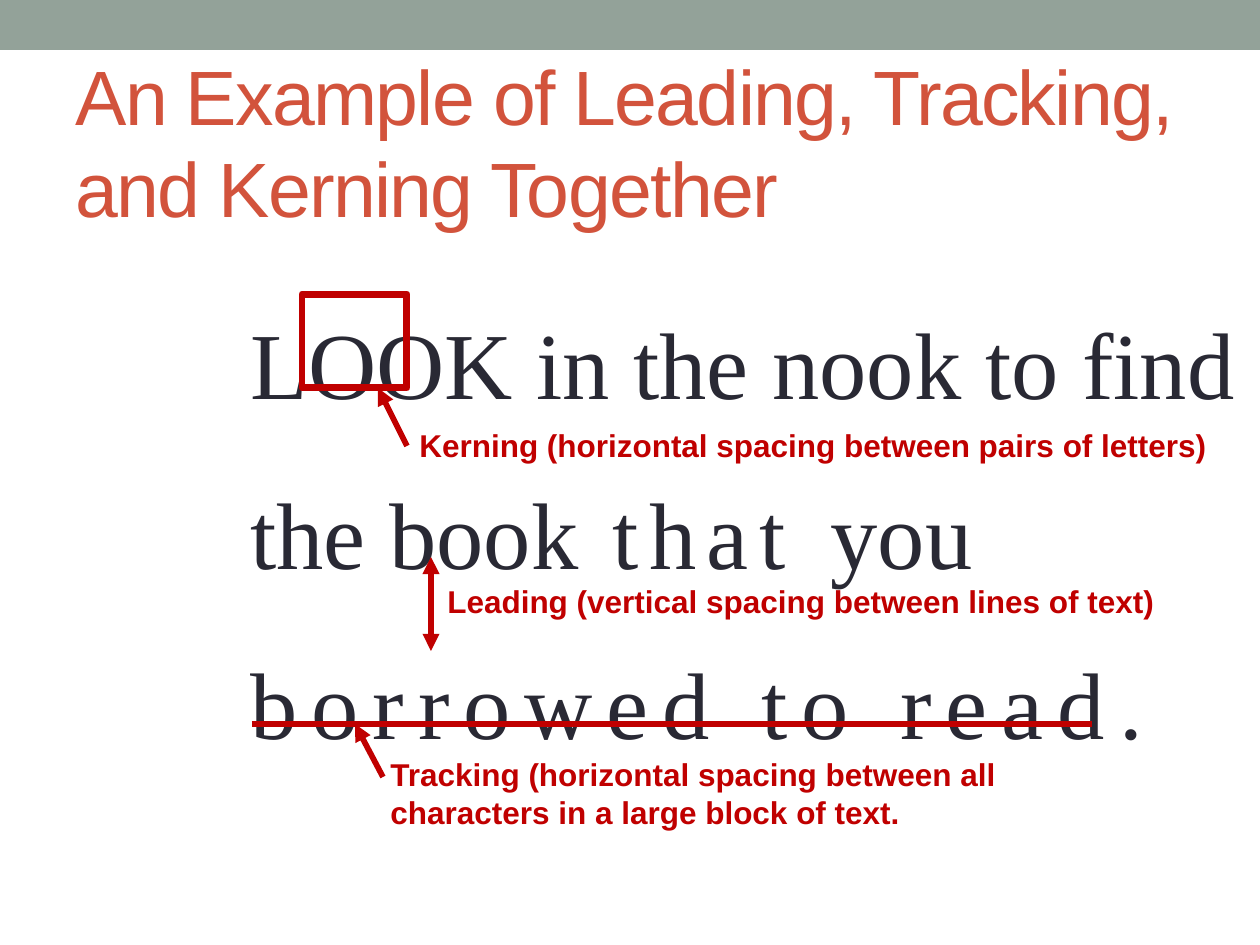
from lxml.etree import SubElement
from pptx import Presentation
from pptx.dml.color import RGBColor
from pptx.enum.shapes import MSO_CONNECTOR as Connector, MSO_SHAPE as Preset
from pptx.enum.text import MSO_ANCHOR as Anchor, PP_ALIGN as Align
from pptx.oxml.ns import qn
from pptx.util import Pt

EMU_PER_PX = 914400 // 126
SLIDE_SIZE = (1260, 945)

THEME = {
    "band": "93A299",
    "paper": "FFFFFF",
    "mark": "C00000",
    "box_line": 4,
    "arrow_line": 3.25,
    "title": {"name": "Arial", "size": 44, "color": "D2533C"},
    "sample": {"name": "Times New Roman", "size": 54, "color": "292934"},
    "label": {"name": "Arial", "size": 18, "color": "C00000", "bold": True},
}

# Boxes are left, top, width, height in px; runs are text, letter spacing in points
BAND_BOX = (0, 0, 1260, 50)
TITLE_BOX = (63, 73, 1134, 136)
TITLE_RUNS = [("An Example of Leading, Tracking, and Kerning Together", -1)]

SAMPLE_BOX = (238, 242, 1018, 630)
SAMPLE_RUNS = [
    ("L", 0),
    ("O", -22),
    ("OK in the nook to find the book", 0),
    (" that ", 6),
    ("you ", 0),
    ("borrowed to read", 8),
    (".", 0),
]
KERNED_PAIR_BOX = (302, 294, 105, 94)

LABELS = [
    ("Kerning (horizontal spacing between pairs of letters)", (407, 420, 840, 50)),
    ("Leading (vertical spacing between lines of text)", (435, 576, 760, 50)),
    ("Tracking (horizontal spacing between all characters in a large block of text.",
     (378, 749, 693, 89)),
]

# start, end, ends that carry an arrowhead
LINES = [
    ((407, 446), (378, 388), ["tailEnd"]),
    ((431, 557), (431, 651), ["headEnd", "tailEnd"]),
    ((383, 777), (355, 724), ["tailEnd"]),
    ((252, 724), (1092, 724), []),
]


def px(values):
    return [value * EMU_PER_PX for value in values]


def color(name):
    return RGBColor.from_string(name)


def add_rectangle(slide, box, fill=None, line=None, width=0):
    shape = slide.shapes.add_shape(Preset.RECTANGLE, *px(box))
    shape.shadow.inherit = False
    if fill:
        shape.fill.solid()
        shape.fill.fore_color.rgb = color(fill)
    else:
        shape.fill.background()
    if line:
        shape.line.color.rgb = color(line)
        shape.line.width = Pt(width)
    else:
        shape.line.fill.background()
    return shape


def write(shape, runs, style, anchor=Anchor.TOP, line_spacing=None):
    """Fill the shape with one left-aligned paragraph of letter-spaced runs."""
    frame = shape.text_frame
    frame.word_wrap = True
    frame.vertical_anchor = anchor
    paragraph = frame.paragraphs[0]
    paragraph.alignment = Align.LEFT
    paragraph.line_spacing = line_spacing
    font_values = {"name": style["name"], "size": Pt(style["size"]),
                   "bold": style.get("bold", False)}
    for text, spacing in runs:
        run = paragraph.add_run()
        run.text = text
        for attribute, value in font_values.items():
            setattr(run.font, attribute, value)
        run.font.color.rgb = color(style["color"])
        if spacing:
            run.font._element.set("spc", str(spacing * 100))


def add_line(slide, start, end, arrowheads):
    connector = slide.shapes.add_connector(Connector.STRAIGHT, *px(start + end))
    connector.line.color.rgb = color(THEME["mark"])
    connector.line.width = Pt(THEME["arrow_line"])
    properties = connector._element.spPr
    for arrowhead in arrowheads:
        SubElement(properties.find(qn("a:ln")), qn("a:" + arrowhead), type="triangle")
    SubElement(properties, qn("a:effectLst"))


def main():
    presentation = Presentation()
    presentation.slide_width, presentation.slide_height = px(SLIDE_SIZE)
    slide = presentation.slides.add_slide(presentation.slide_layouts[6])

    add_rectangle(slide, BAND_BOX, fill=THEME["band"])
    title = slide.shapes.add_textbox(*px(TITLE_BOX))
    write(title, TITLE_RUNS, THEME["title"], anchor=Anchor.MIDDLE)

    sample = add_rectangle(slide, SAMPLE_BOX, fill=THEME["paper"])
    write(sample, SAMPLE_RUNS, THEME["sample"], line_spacing=1.5)
    add_rectangle(slide, KERNED_PAIR_BOX, line=THEME["mark"], width=THEME["box_line"])

    for text, box in LABELS:
        write(slide.shapes.add_textbox(*px(box)), [(text, 0)], THEME["label"])
    for start, end, arrowheads in LINES:
        add_line(slide, start, end, arrowheads)

    presentation.save("out.pptx")


if __name__ == "__main__":
    main()
